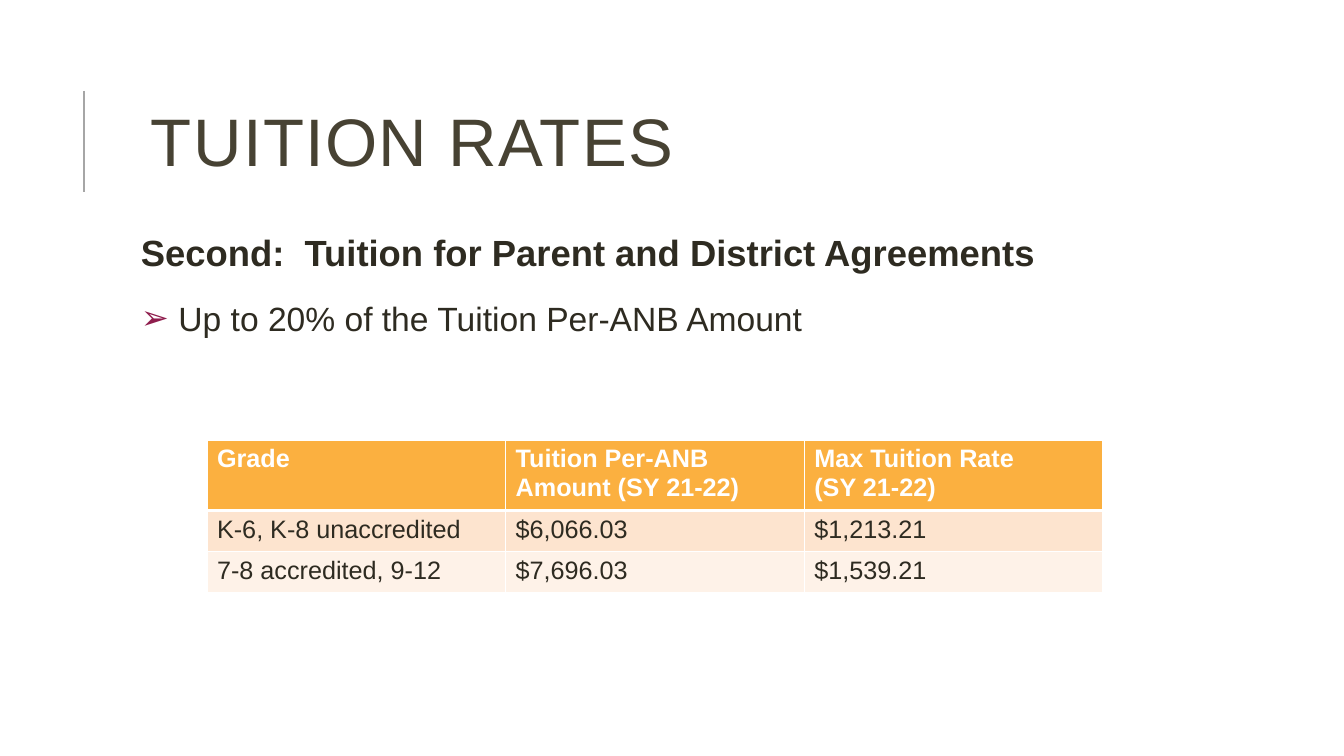
from lxml import etree
from pptx import Presentation
from pptx.dml.color import RGBColor
from pptx.enum.shapes import MSO_CONNECTOR
from pptx.enum.text import MSO_ANCHOR
from pptx.oxml.ns import qn
from pptx.util import Emu, Pt

STRAIGHT = MSO_CONNECTOR.STRAIGHT
TOP, MIDDLE = MSO_ANCHOR.TOP, MSO_ANCHOR.MIDDLE
WHITE = RGBColor(0xFF, 0xFF, 0xFF)
GRAY = RGBColor(0xA6, 0xA6, 0xA6)
OLIVE = RGBColor(0x47, 0x42, 0x33)
INK = RGBColor(0x2E, 0x2B, 0x21)
PLUM = RGBColor(0x8F, 0x1D, 0x4D)
ORANGE = RGBColor(0xFB, 0xB0, 0x40)
PEACH = RGBColor(0xFD, 0xE4, 0xCF)
CREAM = RGBColor(0xFE, 0xF2, 0xE8)
FONT = "Arial"
EMU_PER_PX = 914400 / 100.8

RATES = [
    ["Grade", "Tuition Per-ANB Amount (SY 21-22)", "Max Tuition Rate\n(SY 21-22)"],
    ["K-6, K-8 unaccredited", "$6,066.03", "$1,213.21"],
    ["7-8 accredited, 9-12", "$7,696.03", "$1,539.21"],
]


def px(length):
    """Turn a length in px into EMU."""
    return Emu(round(length * EMU_PER_PX))


class SlideBuilder:
    """Hold the text style and the current slide."""

    def __init__(self, page, font):
        self.page = page
        self.font = font

    def rule(self, x, top, bottom, color, width):
        """Draw a vertical line."""
        line = self.page.shapes.add_connector(STRAIGHT, px(x), px(top), px(x), px(bottom))
        line.line.color.rgb = color
        line.line.width = Pt(width)
        etree.SubElement(line._element.spPr, qn("a:effectLst"))

    def text_box(self, left, top, width, height, anchor=TOP, side_inset=10):
        """Add an empty wrapping text box and return its frame."""
        box = self.page.shapes.add_textbox(px(left), px(top), px(width), px(height))
        frame = box.text_frame
        frame.word_wrap = True
        frame.vertical_anchor = anchor
        frame.margin_left = frame.margin_right = px(side_inset)
        frame.margin_top = frame.margin_bottom = px(5)
        return frame

    def style(self, para, size, color, bold=False, tracking=0):
        """Format every run of a paragraph."""
        for span in para.runs:
            span.font.name = self.font
            span.font.size = Pt(size)
            span.font.bold = bold
            span.font.color.rgb = color
            if tracking:
                span._r.get_or_add_rPr().set("spc", str(tracking))

    def space(self, para, line, before=0, after=0):
        """Set the line and paragraph spacing."""
        para.line_spacing = line
        para.space_before = Pt(before)
        para.space_after = Pt(after)

    def bullet(self, para, symbol, color, indent):
        """Give a paragraph a coloured hanging bullet."""
        properties = para._p.get_or_add_pPr()
        properties.set("marL", str(px(indent)))
        properties.set("indent", str(-px(indent)))
        tint = etree.SubElement(properties, qn("a:buClr"))
        etree.SubElement(tint, qn("a:srgbClr"), val=str(color))
        etree.SubElement(properties, qn("a:buFont"), typeface=self.font)
        etree.SubElement(properties, qn("a:buChar"), char=symbol)

    def border(self, cell, side, color, width):
        """Draw one side of a cell."""
        line = etree.SubElement(cell._tc.get_or_add_tcPr(), qn(f"a:ln{side}"), w=str(Pt(width)))
        fill = etree.SubElement(line, qn("a:solidFill"))
        etree.SubElement(fill, qn("a:srgbClr"), val=str(color))

    def table(self, left, top, width, heights, rows, fills, size):
        """Add a table with a bold header row and white borders."""
        frame = self.page.shapes.add_table(
            len(rows), len(rows[0]), px(left), px(top), px(width), px(sum(heights)))
        grid = frame.table
        for row, height in zip(grid.rows, heights):
            row.height = px(height)
        for i, texts in enumerate(rows):
            header = i == 0
            widths = {"L": 1, "R": 1, "T": 3 if i == 1 else 1, "B": 3 if header else 1}
            for j, text in enumerate(texts):
                cell = grid.cell(i, j)
                for side, thickness in widths.items():
                    self.border(cell, side, WHITE, thickness)
                cell.fill.solid()
                cell.fill.fore_color.rgb = fills[i]
                cell.text_frame.text = text
                for para in cell.text_frame.paragraphs:
                    self.style(para, size, WHITE if header else INK, bold=header)


def main():
    """Build the tuition rates slide."""
    deck = Presentation()
    deck.slide_width, deck.slide_height = px(1344), px(756)
    slide = SlideBuilder(deck.slides.add_slide(deck.slide_layouts[6]), FONT)

    slide.rule(84, 91, 192, GRAY, 1.75)

    title = slide.text_box(141, 65, 1071, 165, anchor=MIDDLE)
    title.text = "TUITION RATES"
    slide.space(title.paragraphs[0], 0.8)
    slide.style(title.paragraphs[0], 48, OLIVE, tracking=100)

    body = slide.text_box(136, 230, 1071, 444, side_inset=5)
    body.text = "Second:  Tuition for Parent and District Agreements"
    heading = body.paragraphs[0]
    slide.space(heading, 0.9, after=2)
    slide.style(heading, 26, INK, bold=True)

    limit = body.add_paragraph()
    limit.text = " Up to 20% of the Tuition Per-ANB Amount"
    slide.bullet(limit, "➢", PLUM, 10)
    slide.space(limit, 0.9, before=18, after=18)
    slide.style(limit, 24, INK)

    slide.table(207, 440, 896, [66, 41, 41], RATES, [ORANGE, PEACH, CREAM], 18)
    deck.save("out.pptx")


if __name__ == "__main__":
    main()
